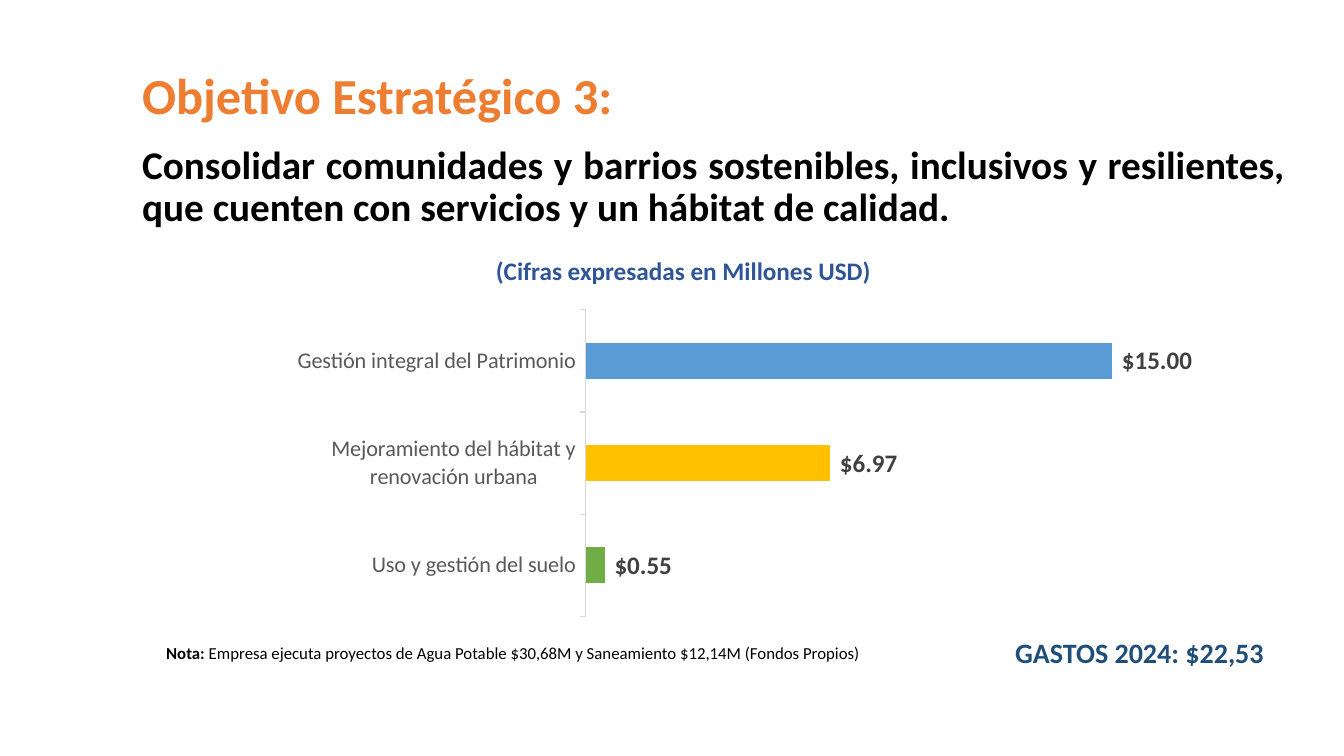
import pptx
import pptx.util
import pptx.chart.data
import pptx.dml.color
import pptx.enum.chart
import pptx.enum.shapes
import pptx.enum.text
import pptx.oxml
import pptx.oxml.ns

FONT = "Calibri"
COLORS = {
    "black": "000000",
    "white": "FFFFFF",
    "orange": "ED7D31",
    "subtitle": "2F5597",
    "total": "1F4E79",
    "axis_text": "595959",
    "axis_line": "D9D9D9",
    "label": "404040",
    "green_bar": "70AD47",
    "yellow_bar": "FFC000",
    "blue_bar": "5B9BD5",
}
SPENDING = [
    ("Uso y gestión del suelo", 0.55, "green_bar"),
    ("Mejoramiento del hábitat y renovación urbana", 6.97, "yellow_bar"),
    ("Gestión integral del Patrimonio", 15, "blue_bar"),
]
DOLLARS = '_("$"* #,##0.00_);_("$"* \\(#,##0.00\\)'
PLOT_AREA = {"x": 0.332, "y": 0.043, "w": 0.619, "h": 0.914}
WIDTH = pptx.util.Inches(13.33)
HEIGHT = pptx.util.Inches(7.5)
MARGIN = 9.83
TEXT_WIDTH = 86.5


def area(left, top, width, height):
    column, row = WIDTH / 100, HEIGHT / 100
    return [round(n) for n in (left * column, top * row, width * column, height * row)]


def color(name):
    return pptx.dml.color.RGBColor.from_string(COLORS[name])


def style(font, size, name, bold=False):
    font.name = FONT
    font.size = pptx.util.Pt(size)
    font.bold = bold
    font.color.rgb = color(name)


def write(box, pieces, size, name, wrap=True):
    box.text_frame.word_wrap = wrap
    para = box.text_frame.paragraphs[0]
    for text, bold in pieces:
        span = para.add_run()
        span.text = text
        style(span.font, size, name, bold)
    return para


def add_text(page, place, pieces, size, name, wrap=True):
    box = page.shapes.add_textbox(*area(*place))
    write(box, pieces, size, name, wrap)
    return box


def justify(box, anchor):
    box.text_frame.vertical_anchor = anchor
    para = box.text_frame.paragraphs[0]
    para.alignment = pptx.enum.text.PP_ALIGN.JUSTIFY
    para.line_spacing = 0.9


def add_title(page, place, text, size):
    title = page.shapes.title
    title.left, title.top, title.width, title.height = area(*place)
    write(title, [(text, True)], size, "black")
    title.text_frame.auto_size = pptx.enum.text.MSO_AUTO_SIZE.NONE
    title.text_frame.margin_bottom = pptx.util.Inches(0.16)
    justify(title, pptx.enum.text.MSO_ANCHOR.BOTTOM)


def add_total(page, place, text):
    box = page.shapes.add_shape(pptx.enum.shapes.MSO_SHAPE.RECTANGLE, *area(*place))
    box.shadow.inherit = False
    box.fill.solid()
    box.fill.fore_color.rgb = color("white")
    box.line.fill.background()
    para = write(box, [(text, True)], 20, "total")
    para.alignment = pptx.enum.text.PP_ALIGN.LEFT


def fix_plot_area(chart):
    parts = "".join(f'<c:{side}Mode val="edge"/>' for side in "xy")
    parts += "".join(f'<c:{key} val="{share}"/>' for key, share in PLOT_AREA.items())
    layout = pptx.oxml.parse_xml(
        f'<c:layout {pptx.oxml.ns.nsdecls("c")}><c:manualLayout>'
        f'<c:layoutTarget val="inner"/>{parts}</c:manualLayout></c:layout>'
    )
    plot_area = chart.plots[0]._element.getparent()
    for old in plot_area.findall(pptx.oxml.ns.qn("c:layout")):
        plot_area.remove(old)
    plot_area.insert(0, layout)


def add_spending_chart(page, place):
    data = pptx.chart.data.CategoryChartData(number_format=DOLLARS)
    data.categories = [name for name, _, _ in SPENDING]
    data.add_series("Series 1", [value for _, value, _ in SPENDING])
    kind = pptx.enum.chart.XL_CHART_TYPE.BAR_CLUSTERED
    chart = page.shapes.add_chart(kind, *area(*place), data).chart
    chart.has_legend = False
    chart.has_title = False
    style(chart.font, 10, "black")

    names = chart.category_axis
    names.has_major_gridlines = False
    names.major_tick_mark = pptx.enum.chart.XL_TICK_MARK.OUTSIDE
    style(names.tick_labels.font, 16, "axis_text")
    names.format.line.color.rgb = color("axis_line")
    names.format.line.width = pptx.util.Pt(0.75)

    values = chart.value_axis
    values.has_major_gridlines = False
    values.minimum_scale = 0
    values.maximum_scale = 16
    values.visible = False

    plot = chart.plots[0]
    plot.gap_width = 182
    plot.vary_by_categories = False
    for index, (_, _, shade) in enumerate(SPENDING):
        fill = plot.series[0].points[index].format.fill
        fill.solid()
        fill.fore_color.rgb = color(shade)

    labels = plot.series[0].data_labels
    labels.show_value = True
    labels.position = pptx.enum.chart.XL_LABEL_POSITION.OUTSIDE_END
    labels.number_format = DOLLARS
    labels.number_format_is_linked = False
    style(labels.font, 18, "label", True)
    fix_plot_area(chart)


def main():
    deck = pptx.Presentation()
    deck.slide_width, deck.slide_height = WIDTH, HEIGHT
    page = deck.slides.add_slide(deck.slide_layouts[5])

    add_text(page, (36.16, 33.07, 29.63, 5.33),
             [("(Cifras expresadas en Millones USD)", True)], 18, "subtitle", wrap=False)
    add_total(page, (74.79, 83.4, 21.53, 5.87), "GASTOS 2024: $22,53")
    add_text(page, (11.63, 84.4, 63.17, 4),
             [("Nota: ", True),
              ("Empresa ejecuta proyectos de Agua Potable $30,68M y Saneamiento "
               "$12,14M (Fondos Propios)", False)], 12, "black")
    add_title(page, (MARGIN, 8.27, TEXT_WIDTH, 24.27),
              "Consolidar comunidades y barrios sostenibles, inclusivos y resilientes, "
              "que cuenten con servicios y un hábitat de calidad.", 28)
    heading = add_text(page, (MARGIN, 7.27, TEXT_WIDTH, 11.33),
                       [("Objetivo Estratégico 3:", True)], 36, "orange")
    justify(heading, pptx.enum.text.MSO_ANCHOR.MIDDLE)
    add_spending_chart(page, (21.16, 39.07, 67.97, 44.4))
    deck.save("out.pptx")


if __name__ == "__main__":
    main()
